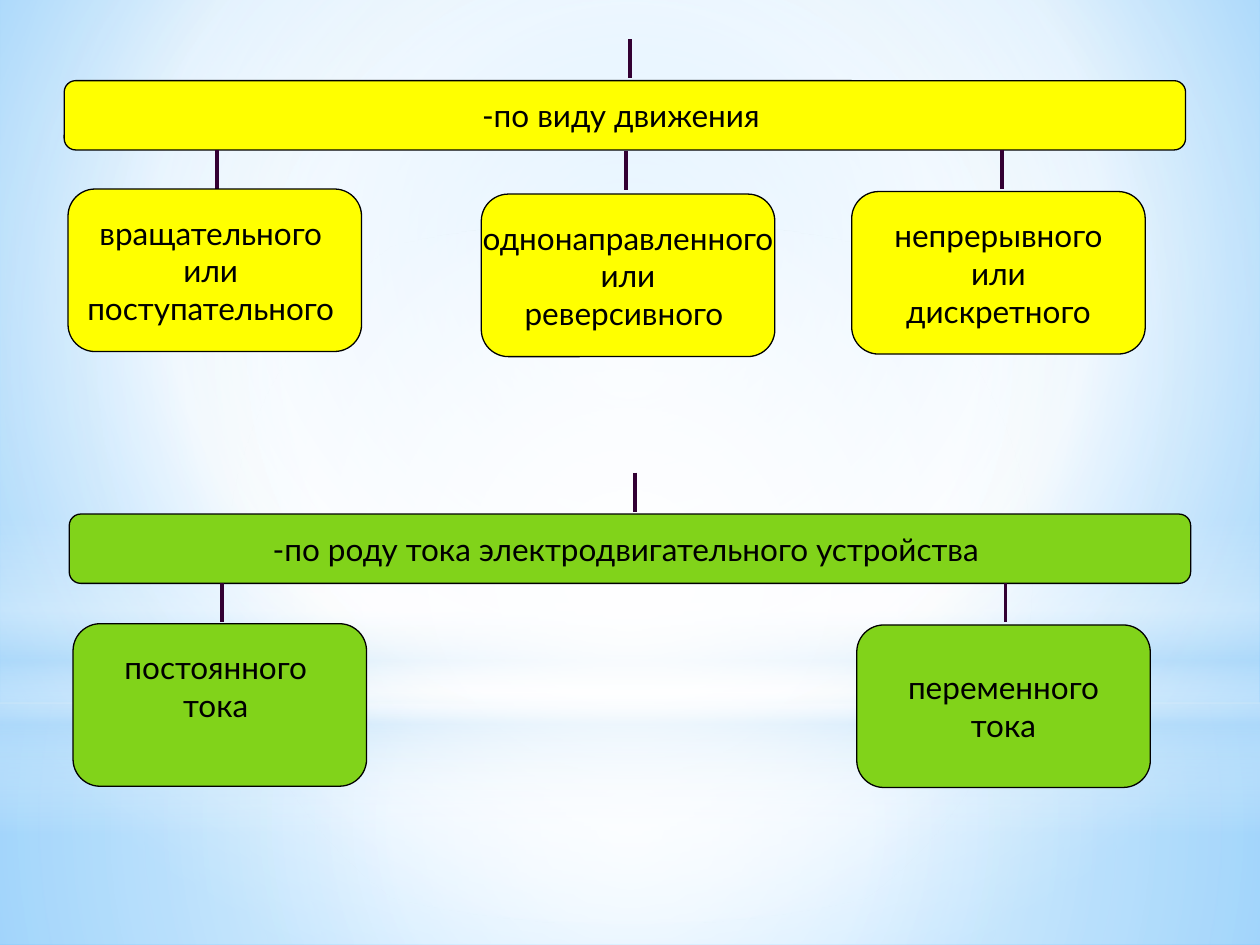
import pptx
import pptx.util
import pptx.dml.color
import pptx.enum.shapes
import pptx.enum.text
import pptx.oxml
import pptx.oxml.ns
import lxml.etree

Inches = pptx.util.Inches
Pt = pptx.util.Pt
RGB = pptx.dml.color.RGBColor
KIND = pptx.enum.shapes.MSO_SHAPE
qn = pptx.oxml.ns.qn

BLACK = RGB(0, 0, 0)
PLUM = RGB(0x33, 0x00, 0x33)
YELLOW = RGB(0xFF, 0xFF, 0x00)
GREEN = RGB(0x81, 0xD3, 0x1A)
WHITE = RGB(0xFF, 0xFF, 0xFF)
PALE = RGB(0xB4, 0xDC, 0xFA)
SKY = RGB(0x9E, 0xD5, 0xFF)
BLUE = RGB(0x5B, 0xB9, 0xFF)

MID = (50, 50, 50, 50)
BAR_W, BAR_H = 8.9, 0.55
BOX_W, BOX_H = 2.33, 1.29
STEM = 0.31


def blend(props, stops, focus=None):
    marks = "".join(
        f'<a:gs pos="{pos * 1000}"><a:srgbClr val="{tone}">'
        f'<a:alpha val="{alpha * 1000}"/></a:srgbClr></a:gs>'
        for pos, tone, alpha in stops)
    if focus:
        sides = " ".join(f'{s}="{v * 1000}"' for s, v in zip("ltrb", focus))
        way = f'<a:path path="circle"><a:fillToRect {sides}/></a:path>'
    else:
        way = '<a:lin ang="5400000" scaled="0"/>'
    grad = pptx.oxml.parse_xml(
        f'<a:gradFill {pptx.oxml.ns.nsdecls("a")} rotWithShape="1">'
        f'<a:gsLst>{marks}</a:gsLst>{way}</a:gradFill>')
    props.replace(props.find(qn("a:solidFill")), grad)


def add_glow(slide, kind, top, high, stops, focus=None):
    glow = slide.shapes.add_shape(kind, 0, Inches(top), Inches(10), Inches(high))
    glow.shadow.inherit = False
    glow.line.fill.background()
    glow.fill.solid()
    blend(glow._element.spPr, stops, focus)


def add_back(slide):
    slide.background.fill.solid()
    props = slide._element.find(".//" + qn("p:bgPr"))
    blend(props, [(0, SKY, 100), (60, WHITE, 100), (100, BLUE, 100)],
          (20, 10, 20, 60))
    add_glow(slide, KIND.RECTANGLE, 5.58, 1.92,
             [(0, WHITE, 91), (37, WHITE, 76), (100, PALE, 79)], MID)
    add_glow(slide, KIND.RECTANGLE, 0, 5.58,
             [(0, WHITE, 89), (48, WHITE, 62), (100, PALE, 79)], MID)
    add_glow(slide, KIND.RECTANGLE, 4.12, 2.5,
             [(0, WHITE, 0), (29, WHITE, 30), (45, PALE, 40),
              (55, WHITE, 26), (65, PALE, 60), (100, WHITE, 0)])
    add_glow(slide, KIND.OVAL, 1.75, 5.58,
             [(0, WHITE, 100), (56, WHITE, 0)], MID)


def add_box(slide, left, top, wide, high, lines, fill, lift=0):
    box = slide.shapes.add_shape(KIND.ROUNDED_RECTANGLE, Inches(left),
                                 Inches(top), Inches(wide), Inches(high))
    box.shadow.inherit = False
    box.fill.solid()
    box.fill.fore_color.rgb = fill
    box.line.color.rgb = BLACK
    box.line.width = Pt(0.75)
    frame = box.text_frame
    frame.word_wrap = False
    frame.vertical_anchor = pptx.enum.text.MSO_ANCHOR.MIDDLE
    frame.margin_bottom = Inches(0.05 + lift)
    frame.text = "\n".join(lines)
    for para in frame.paragraphs:
        para.alignment = pptx.enum.text.PP_ALIGN.CENTER
        para.font.name = "Lato"
        para.font.size = Pt(18)
        para.font.color.rgb = BLACK


def add_stem(slide, x, top):
    stem = slide.shapes.add_connector(
        pptx.enum.shapes.MSO_CONNECTOR.STRAIGHT,
        Inches(x), Inches(top), Inches(x), Inches(top + STEM))
    stem.line.color.rgb = PLUM
    stem.line.width = Pt(2.25)
    lxml.etree.SubElement(stem._element.spPr, qn("a:effectLst"))


def add_tree(slide, left, top, head, leaves, fill):
    add_box(slide, left, top, BAR_W, BAR_H, [head], fill)
    add_stem(slide, left + 4.49, top - 0.33)
    for stem_x, stem_y, box_x, box_y, lift, lines in leaves:
        add_stem(slide, left + stem_x, top + stem_y)
        add_box(slide, left + box_x, top + box_y, BOX_W, BOX_H,
                lines, fill, lift)


def main():
    deck = pptx.Presentation()
    deck.slide_width, deck.slide_height = Inches(10), Inches(7.5)
    slide = deck.slides.add_slide(deck.slide_layouts[6])
    add_back(slide)
    add_tree(slide, 0.51, 0.64, "-по виду движения ", [
        (1.21, 0.55, 0.03, 0.86, 0,
         ["вращательного ", "или ", "поступательного "]),
        (4.46, 0.56, 3.31, 0.9, 0,
         ["однонаправленного", "или", "реверсивного "]),
        (7.44, 0.55, 6.25, 0.88, 0,
         ["непрерывного", "или", "дискретного"]),
    ], YELLOW)
    add_tree(slide, 0.55, 4.08,
             "-по роду тока электродвигательного устройства ", [
                 (1.21, 0.55, 0.03, 0.87, 0.3, ["постоянного ", "тока "]),
                 (7.43, 0.55, 6.25, 0.88, 0, ["переменного", "тока"]),
             ], GREEN)
    deck.save("out.pptx")


if __name__ == "__main__":
    main()
